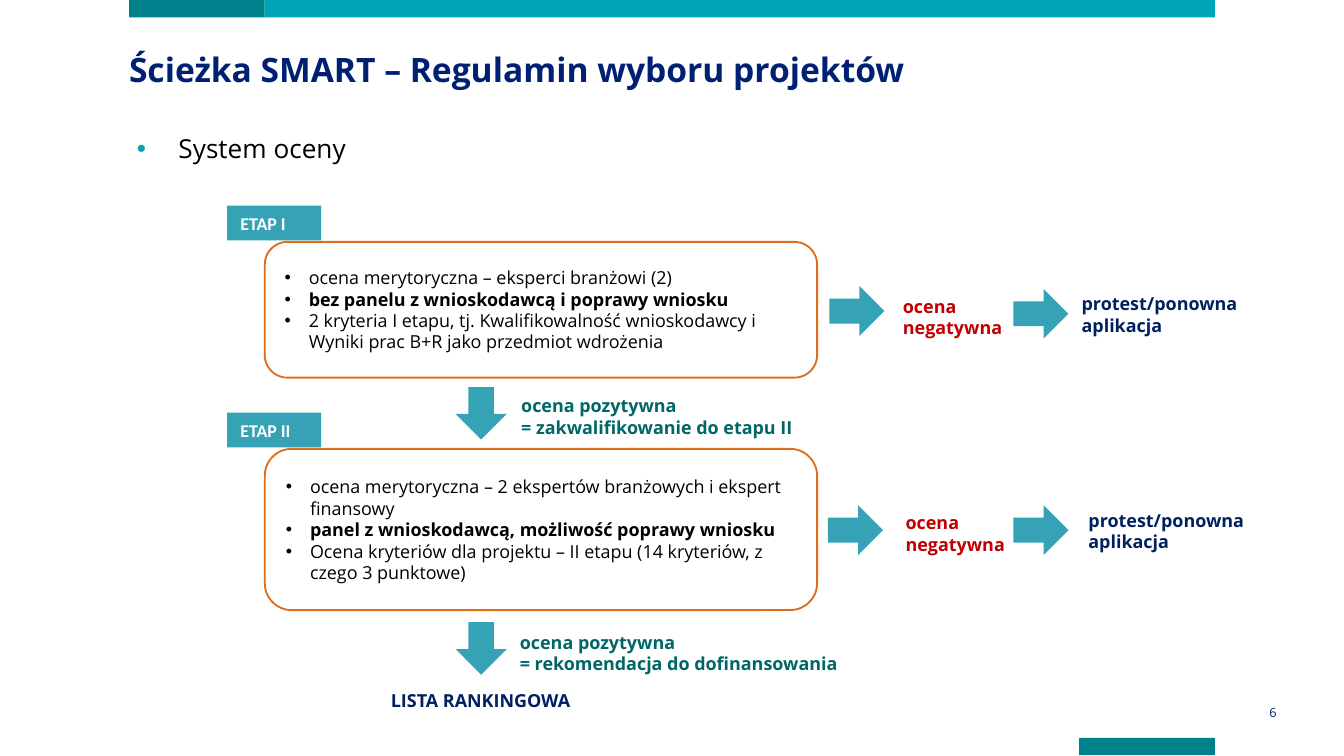
"""Build the slide on the two-stage project assessment system."""
from lxml.etree import SubElement
from pptx import Presentation
from pptx.dml.color import RGBColor
from pptx.enum.shapes import MSO_SHAPE as SHAPE
from pptx.enum.text import MSO_ANCHOR as ANCHOR, MSO_AUTO_SIZE as AUTO, PP_ALIGN as ALIGN
from pptx.oxml.ns import qn
from pptx.util import Inches, Pt

DARK_TEAL = RGBColor(0x00, 0x82, 0x8C)
TEAL = RGBColor(0x00, 0xA4, 0xB7)
ARROW_TEAL = RGBColor(0x35, 0xA2, 0xB6)
ORANGE = RGBColor(0xDF, 0x6D, 0x1E)
GREEN = RGBColor(0x00, 0x66, 0x66)
RED = RGBColor(0xC0, 0x00, 0x00)
NAVY = RGBColor(0x00, 0x20, 0x60)
TITLE_BLUE = RGBColor(0x00, 0x20, 0x73)
BLACK = RGBColor(0x00, 0x00, 0x00)
WHITE = RGBColor(0xFF, 0xFF, 0xFF)
BODY = 9.57

prs = Presentation()
prs.slide_width, prs.slide_height = Inches(10), Inches(10) * 9 // 16
s = prs.slides.add_slide(prs.slide_layouts[6])


def add_box(kind, x, y, w, h, fill=None, line=None):
    """Add a preset shape, or a wrapping text box when kind is None."""
    at = [Inches(v) for v in (x, y, w, h)]
    if kind is None:
        sp = s.shapes.add_textbox(*at)
        sp.text_frame.word_wrap = True
        return sp
    sp = s.shapes.add_shape(kind, *at)
    sp.shadow.inherit = False
    sp.fill.solid()
    sp.fill.fore_color.rgb = fill
    if line is None:
        sp.line.fill.background()
    else:
        sp.line.color.rgb = line
        sp.line.width = Pt(1)
    return sp


def write(sp, lines, size, color, bold=(True,), font="Open Sans", align=ALIGN.LEFT,
          bullet=None, indent=0.18, hanging=0.18):
    """Write one paragraph per line; bold flags repeat, bullet is a colour."""
    tf = sp.text_frame
    for i, line in enumerate(lines):
        p = tf.paragraphs[0] if i == 0 else tf.add_paragraph()
        p.text = line
        p.alignment = align
        if bullet is not None:
            pPr = p._p.get_or_add_pPr()
            pPr.set("marL", str(Inches(indent)))
            pPr.set("indent", str(-Inches(hanging)))
            SubElement(SubElement(pPr, qn("a:buClr")), qn("a:srgbClr"), val=str(bullet))
            SubElement(pPr, qn("a:buFont"), typeface="Arial")
            SubElement(pPr, qn("a:buChar"), char="•")
        r = p.runs[0]
        r.font.size, r.font.name = Pt(size), font
        r.font.bold = bold[i % len(bold)]
        r.font.color.rgb = color
    return tf


for x, y, w, fill in [(0.96, 0, 1.01, DARK_TEAL), (1.97, 0, 7.07, TEAL),
                      (8.03, 5.49, 1.01, DARK_TEAL)]:
    add_box(SHAPE.RECTANGLE, x, y, w, 0.13, fill)

sp = add_box(None, 0.96, 0.3, 8.08, 0.8)
tf = write(sp, ["Ścieżka SMART – Regulamin wyboru projektów"], 18, TITLE_BLUE)
tf.margin_left = tf.margin_right = tf.margin_top = tf.margin_bottom = 0
tf.paragraphs[0].line_spacing = Pt(26)

sp = add_box(None, 0.91, 0.92, 7.97, 0.34)
tf = write(sp, ["System oceny"], 14, BLACK, (False,), bullet=TEAL, indent=0.32, hanging=0.31)
tf.paragraphs[0].line_spacing = Pt(18)

stages = [
    dict(name="ETAP I", top=1.8, height=1.01, down=2.88,
         reject=(6.17, 2.13), negative=(6.62, 2.15), again=2.15, protest=(7.95, 2.13, 1.64),
         positive=(3.78, 2.89), result="= zakwalifikowanie do etapu II",
         points=["ocena merytoryczna – eksperci branżowi (2)",
                 "bez panelu z wnioskodawcą i poprawy wniosku",
                 "2 kryteria I etapu, tj. Kwalifikowalność wnioskodawcy i "
                 "Wyniki prac B+R jako przedmiot wdrożenia"]),
    dict(name="ETAP II", top=3.34, height=1.2, down=4.63,
         reject=(6.16, 3.76), negative=(6.64, 3.76), again=3.76, protest=(8, 3.74, 1.49),
         positive=(3.77, 4.65), result="= rekomendacja do dofinansowania",
         points=["ocena merytoryczna – 2 ekspertów branżowych i ekspert finansowy",
                 "panel z wnioskodawcą, możliwość poprawy wniosku",
                 "Ocena kryteriów dla projektu – II etapu (14 kryteriów, z czego 3 punktowe)"]),
]

for stage in stages:
    sp = add_box(SHAPE.ROUNDED_RECTANGLE, 1.97, stage["top"], 4.11, stage["height"], WHITE, ORANGE)
    tf = write(sp, stage["points"], BODY, BLACK, (False, True, False), bullet=BLACK)
    tf.vertical_anchor = ANCHOR.MIDDLE

    add_box(SHAPE.DOWN_ARROW, 3.39, stage["down"], 0.38, 0.39, ARROW_TEAL)
    for x, y in [stage["reject"], (7.54, stage["again"])]:
        add_box(SHAPE.RIGHT_ARROW, x, y, 0.41, 0.37, ARROW_TEAL)

    labels = [((*stage["positive"], 2.66), ["ocena pozytywna", stage["result"]], GREEN),
              ((*stage["negative"], 1.07), ["ocena negatywna"], RED),
              (stage["protest"], ["protest/ponowna aplikacja"], NAVY)]
    for at, lines, color in labels:
        sp = add_box(None, *at, 0.42)
        write(sp, lines, BODY, color).auto_size = AUTO.SHAPE_TO_FIT_TEXT

    sp = add_box(SHAPE.RECTANGLE, 1.69, stage["top"] - 0.27, 0.7, 0.26, ARROW_TEAL)
    tf = write(sp, [stage["name"]], 9.6, WHITE, font="Calibri")
    tf.vertical_anchor = ANCHOR.MIDDLE

sp = add_box(None, 2.2, 5.08, 2.75, 0.26)
write(sp, ["LISTA RANKINGOWA"], 9.6, NAVY, align=ALIGN.CENTER)

sp = add_box(None, 7.2, 5.23, 2.3, 0.14)
tf = write(sp, ["6"], 6.8, TITLE_BLUE, (False,), align=ALIGN.RIGHT)
tf.margin_left = tf.margin_right = tf.margin_top = tf.margin_bottom = 0
tf.vertical_anchor = ANCHOR.MIDDLE

prs.save("out.pptx")
